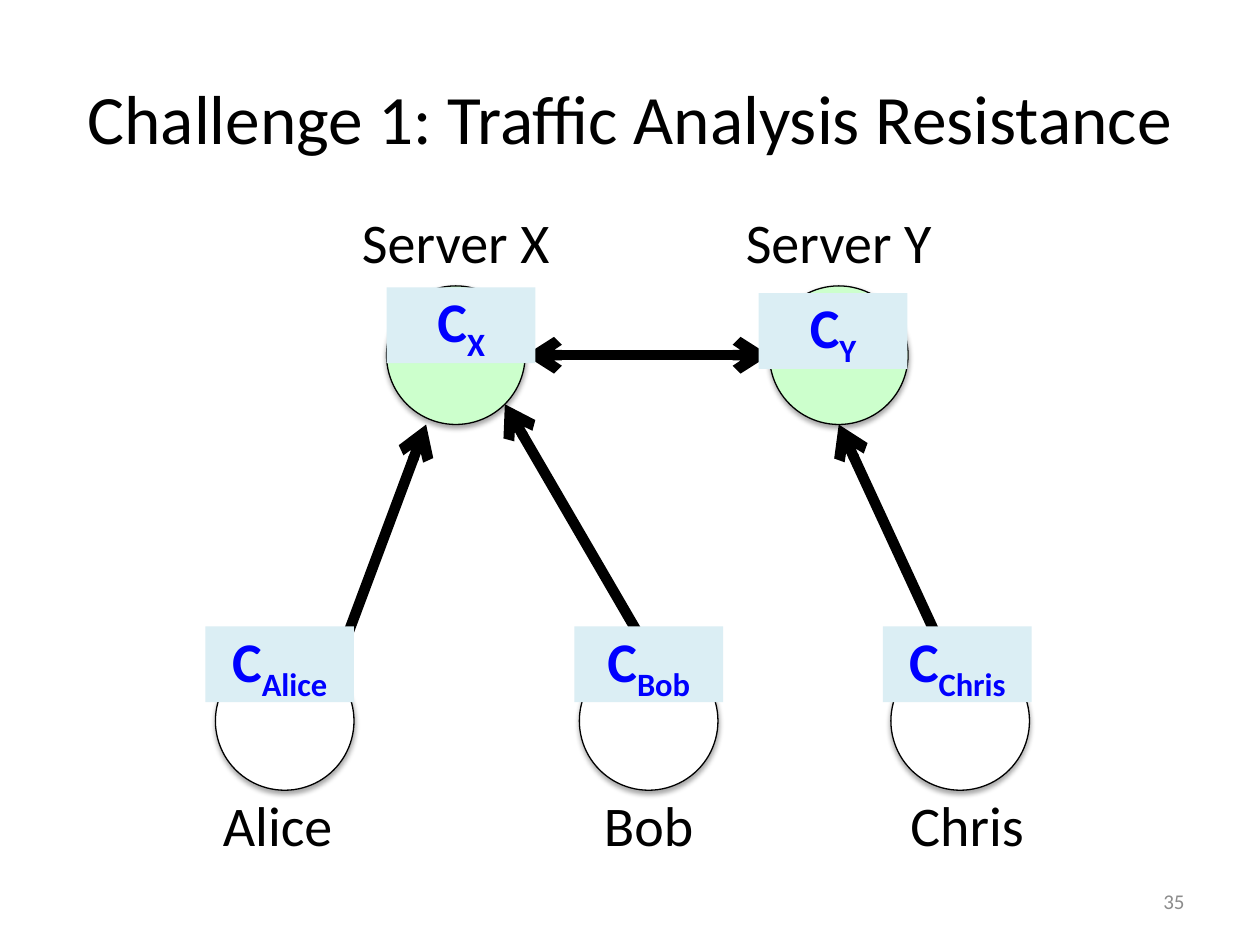
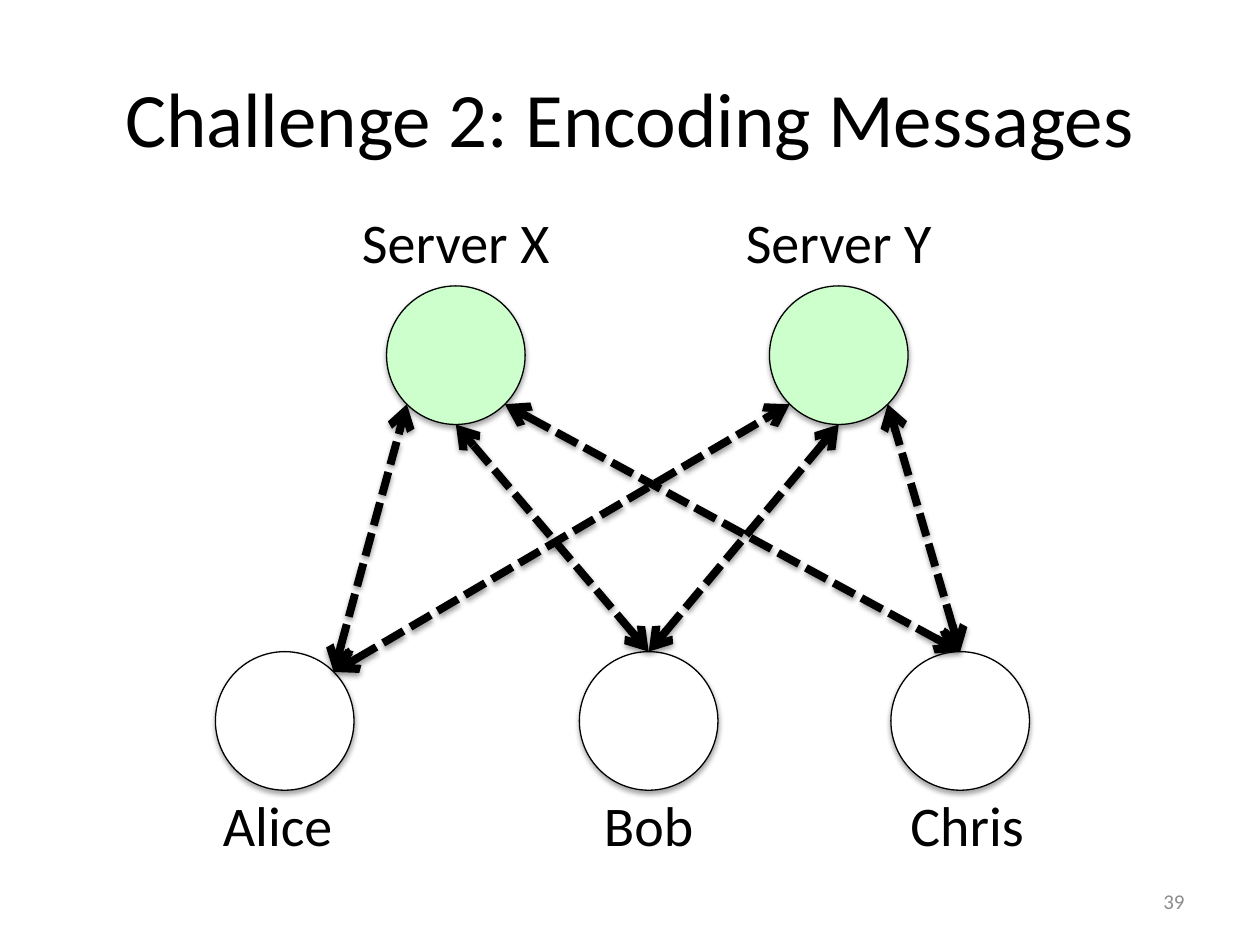
from math import cos, radians, sin

from lxml.etree import SubElement
from pptx import Presentation
from pptx.dml.color import RGBColor
from pptx.enum.dml import MSO_LINE
from pptx.enum.shapes import MSO_CONNECTOR, MSO_SHAPE
from pptx.enum.text import MSO_ANCHOR as Anchor, PP_ALIGN as Align
from pptx.oxml.ns import qn
from pptx.util import Pt

BLACK = RGBColor(0x00, 0x00, 0x00)
WHITE = RGBColor(0xFF, 0xFF, 0xFF)
GREY = RGBColor(0x8C, 0x8C, 0x8C)
BLUE = RGBColor(0x00, 0x00, 0xFF)
PALE_BLUE = RGBColor(0xDB, 0xEE, 0xF4)
PALE_GREEN = RGBColor(0xCC, 0xFF, 0xCC)

# Network layout in points: node centres, and label shifts for the clients
RADIUS = 39.6
SERVER_Y, CLIENT_Y = 203, 412
SERVERS = {"X": 260.5, "Y": 479.3}
CLIENTS = {"Alice": (162.7, -4), "Bob": (370.7, 0), "Chris": (548.7, 4)}
CENTRES = {name: (x, SERVER_Y) for name, x in SERVERS.items()}
CENTRES |= {name: (x, CLIENT_Y) for name, (x, _) in CLIENTS.items()}

# Directions on a node's rim, in degrees clockwise from the right
RIGHT, LOWER_RIGHT, BOTTOM, LOWER_LEFT, LEFT, TOP, UPPER_RIGHT = (
    0, 45, 90, 135, 180, 270, 315)


def rim(name, angle):
    x, y = CENTRES[name]
    return (x + RADIUS * cos(radians(angle)), y + RADIUS * sin(radians(angle)))


class Deck:
    font = "Calibri"
    label_size = 32

    def __init__(self):
        self.prs = Presentation()
        self.prs.slide_width, self.prs.slide_height = Pt(720), Pt(540)
        self.slide = None

    def new_slide(self, title, title_size, number):
        self.slide = self.prs.slides.add_slide(self.prs.slide_layouts[6])
        self.text(title, 36, 21.6, 648, 90, title_size, anchor=Anchor.MIDDLE)
        self.text(number, 516, 500.5, 168, 28.8, 12, GREY, Align.RIGHT,
                  Anchor.MIDDLE)

    def style(self, run, size, color, bold=False):
        run.font.name, run.font.size, run.font.bold = self.font, Pt(size), bold
        run.font.color.rgb = color

    def text(self, words, left, top, width, height, size, color=BLACK,
             align=Align.CENTER, anchor=Anchor.TOP):
        box = self.slide.shapes.add_textbox(
            Pt(left), Pt(top), Pt(width), Pt(height))
        frame = box.text_frame
        frame.word_wrap, frame.vertical_anchor = True, anchor
        frame.text = words
        frame.paragraphs[0].alignment = align
        self.style(frame.paragraphs[0].runs[0], size, color)

    def effects(self, shape, opacity=0, distance=0):
        """Replace the theme shadow by a soft one below, or by none."""
        effect_list = SubElement(shape._element.spPr, qn("a:effectLst"))
        if opacity:
            shadow = SubElement(
                effect_list, qn("a:outerShdw"), blurRad=str(Pt(3.1)),
                dist=str(Pt(distance)), dir="5400000", rotWithShape="0")
            black = SubElement(shadow, qn("a:srgbClr"), val=str(BLACK))
            SubElement(black, qn("a:alpha"), val=str(opacity * 1000))

    def label(self, words, centre, top):
        self.text(words, centre - 84.5, top, 169, 46, self.label_size)

    def node(self, name, fill):
        x, y = CENTRES[name]
        circle = self.slide.shapes.add_shape(
            MSO_SHAPE.OVAL, Pt(x - RADIUS), Pt(y - RADIUS),
            Pt(2 * RADIUS), Pt(2 * RADIUS))
        circle.fill.solid()
        circle.fill.fore_color.rgb = fill
        circle.line.color.rgb, circle.line.width = BLACK, Pt(0.75)
        self.effects(circle, 35, 1.8)

    def network(self):
        for name, x in SERVERS.items():
            self.node(name, PALE_GREEN)
            self.label(f"Server {name}", x, 115)
        for name, (x, shift) in CLIENTS.items():
            self.node(name, WHITE)
            self.label(name, x + shift, 448)

    def arrow(self, start, end, width, both_ends=False, dashed=False):
        link = self.slide.shapes.add_connector(
            MSO_CONNECTOR.STRAIGHT, *map(Pt, start + end))
        link.line.color.rgb, link.line.width = BLACK, Pt(width)
        if dashed:
            link.line.dash_style = MSO_LINE.SQUARE_DOT
        outline = link.line._get_or_add_ln()
        for tag in ("a:headEnd", "a:tailEnd")[0 if both_ends else 1:]:
            SubElement(outline, qn(tag), type="arrow")
        self.effects(link, 38 if dashed else 0, 1.6)

    def cipher(self, owner, centre, top):
        """A card showing C with its owner as subscript."""
        card = self.slide.shapes.add_shape(
            MSO_SHAPE.RECTANGLE, Pt(centre - 42.5), Pt(top), Pt(85), Pt(43.3))
        card.fill.solid()
        card.fill.fore_color.rgb = PALE_BLUE
        card.line.fill.background()
        self.effects(card)
        card.text_frame.vertical_anchor = Anchor.MIDDLE
        paragraph = card.text_frame.paragraphs[0]
        paragraph.alignment = Align.CENTER
        for words in ("C", owner):
            run = paragraph.add_run()
            run.text = words
            self.style(run, self.label_size, BLUE, bold=True)
        run._r.get_or_add_rPr().set("baseline", "-25000")


def main():
    deck = Deck()

    # Each client sends to one server, and the servers exchange
    deck.new_slide("Challenge 1: Traffic Analysis Resistance", 39.6, "35")
    deck.network()
    deck.arrow(rim("Alice", UPPER_RIGHT), (243.5, 242.6), 6)
    deck.arrow(rim("X", RIGHT), rim("Y", LEFT), 6, both_ends=True)
    deck.arrow(rim("Bob", TOP), rim("X", LOWER_RIGHT), 6)
    deck.arrow((539.3, 372.4), rim("Y", BOTTOM), 6)
    for owner, centre, top in (
            ("Alice", 159.8, 358), ("Bob", 370.7, 358), ("Chris", 547, 358),
            ("X", 263.5, 164.2), ("Y", 476, 167.5)):
        deck.cipher(owner, centre, top)

    # Every client talks to both servers
    deck.new_slide("Challenge 2: Encoding Messages", 44, "39")
    deck.network()
    for client, client_side, x_side, y_side in (
            ("Alice", UPPER_RIGHT, LOWER_LEFT, LOWER_LEFT),
            ("Bob", TOP, BOTTOM, BOTTOM),
            ("Chris", TOP, LOWER_RIGHT, LOWER_RIGHT)):
        for server, side in (("X", x_side), ("Y", y_side)):
            deck.arrow(rim(client, client_side), rim(server, side), 4.5,
                       both_ends=True, dashed=True)

    deck.prs.save("out.pptx")


if __name__ == "__main__":
    main()
